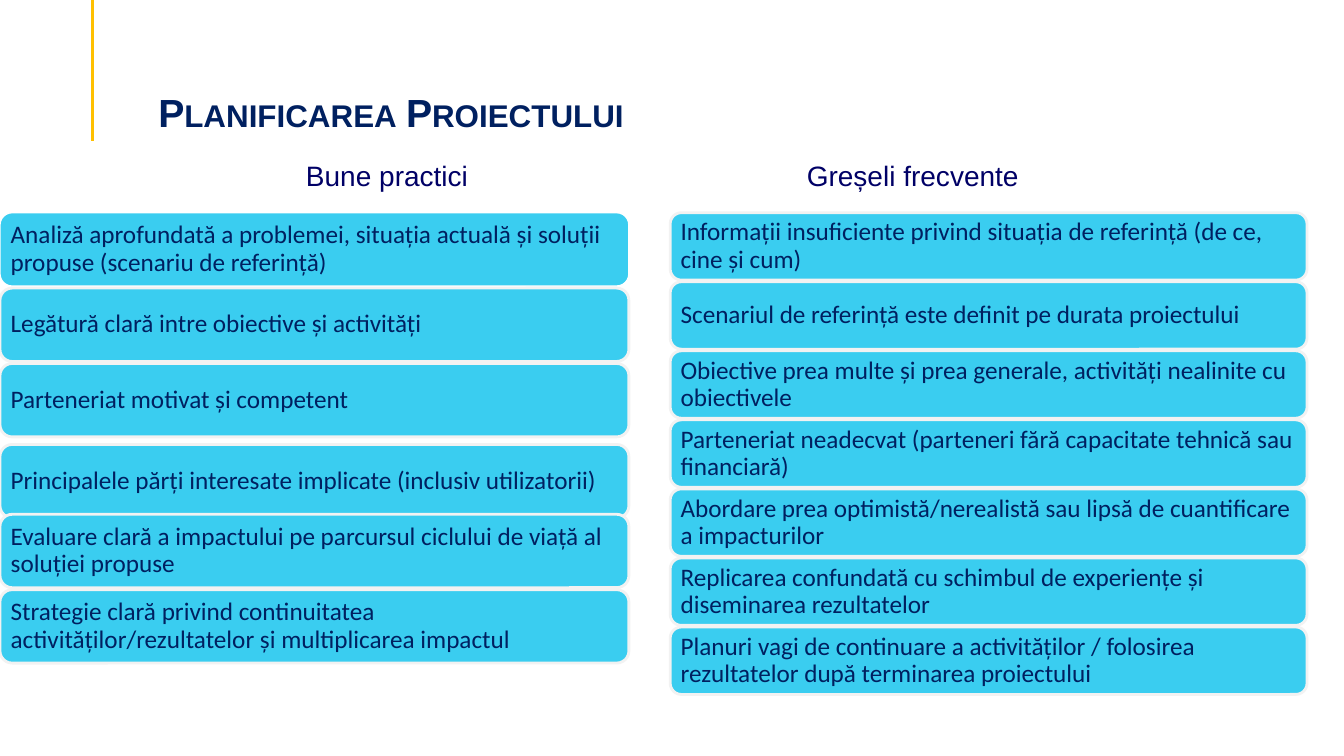
from lxml import etree
from pptx import Presentation
from pptx.dml.color import RGBColor
from pptx.enum.shapes import MSO_CONNECTOR, MSO_SHAPE
from pptx.enum.text import MSO_ANCHOR, PP_ALIGN
from pptx.oxml.ns import qn
from pptx.util import Cm, Pt

STRAIGHT = MSO_CONNECTOR.STRAIGHT
ROUNDED = MSO_SHAPE.ROUNDED_RECTANGLE
MIDDLE, BOTTOM = MSO_ANCHOR.MIDDLE, MSO_ANCHOR.BOTTOM
LEFT, CENTER = PP_ALIGN.LEFT, PP_ALIGN.CENTER

NAVY = RGBColor(0x00, 0x20, 0x60)
HEADING_BLUE = RGBColor(0x00, 0x00, 0x66)
CYAN = RGBColor(0x3A, 0xCD, 0xF0)
GOLD = RGBColor(0xFF, 0xC0, 0x00)
PALE = RGBColor(0xF2, 0xF2, 0xF2)
WHITE = RGBColor(0xFF, 0xFF, 0xFF)

CARDS_TOP = 5.36
CARD_INSET = Cm(0.18)

GOOD_PRACTICES = [
    "Analiză aprofundată a problemei, situația actuală și soluții propuse (scenariu de referință)",
    "Legătură clară intre obiective și activități",
    "Parteneriat motivat și competent",
    "Principalele părți interesate implicate (inclusiv utilizatorii)",
    "Evaluare clară a impactului pe parcursul ciclului de viață al soluției propuse",
    "Strategie clară privind continuitatea activităților/rezultatelor și multiplicarea impactul",
]
COMMON_MISTAKES = [
    "Informații insuficiente privind situația de referință (de ce, cine și cum)",
    "Scenariul de referință este definit pe durata proiectului",
    "Obiective prea multe și prea generale, activități nealinite cu obiectivele",
    "Parteneriat neadecvat (parteneri fără capacitate tehnică sau financiară)",
    "Abordare prea optimistă/nerealistă sau lipsă de cuantificare a impacturilor",
    "Replicarea confundată cu schimbul de experiențe și diseminarea rezultatelor",
    "Planuri vagi de continuare a activităților / folosirea rezultatelor după terminarea proiectului",
]


def write_text(box, text, font_name, size, color, align, line_spacing):
    """Fill a shape with one formatted paragraph and return its run."""
    frame = box.text_frame
    frame.word_wrap = True
    para = frame.paragraphs[0]
    para.text = text
    para.alignment = align
    para.line_spacing = line_spacing
    span = para.runs[0]
    span.font.name = font_name
    span.font.size = Pt(size)
    span.font.color.rgb = color
    return span


def add_title(slide, left, top, width, height):
    accent = slide.shapes.add_connector(STRAIGHT, Cm(2.34), 0, Cm(2.34), Cm(3.56))
    accent.line.color.rgb = GOLD
    accent.line.width = Pt(2.25)
    etree.SubElement(accent._element.spPr, qn("a:effectLst"))

    box = slide.shapes.add_textbox(Cm(left), Cm(top), Cm(width), Cm(height))
    span = write_text(box, "Planificarea Proiectului", "Arial", 28, NAVY, LEFT, 1.5)
    span.font.bold = True
    span._r.get_or_add_rPr().set("cap", "small")
    frame = box.text_frame
    frame.vertical_anchor = BOTTOM
    frame.margin_left = Cm(1.25)
    frame.margin_bottom = 0


def add_heading(slide, text, left, width):
    box = slide.shapes.add_textbox(Cm(left), Cm(3.94), Cm(width), Cm(1.42))
    write_text(box, text, "Arial", 20, HEADING_BLUE, CENTER, 0.93)


def add_card(slide, text, left, top, width, height):
    card = slide.shapes.add_shape(ROUNDED, Cm(left), Cm(top), Cm(width), Cm(height))
    card.shadow.inherit = False
    card.fill.solid()
    card.fill.fore_color.rgb = CYAN
    card.line.color.rgb = PALE
    card.line.width = Pt(2)
    write_text(card, text, "Calibri", 18, NAVY, LEFT, 0.9)
    frame = card.text_frame
    frame.vertical_anchor = MIDDLE
    frame.margin_left = frame.margin_right = CARD_INSET
    frame.margin_top = frame.margin_bottom = CARD_INSET
    return card


def add_card_column(slide, texts, left, width, height, pitch):
    """Stack one card per text, evenly spaced, and return the cards."""
    return [
        add_card(slide, text, left, CARDS_TOP + row * pitch, width, height)
        for row, text in enumerate(texts)
    ]


def build_planning_slide(deck):
    slide = deck.slides.add_slide(deck.slide_layouts[6])
    add_title(slide, 2.74, 1.24, 29.18, 2.16)

    practices = add_card_column(slide, GOOD_PRACTICES, 0, 15.85, 1.85, 1.9)
    practices[0].line.color.rgb = WHITE
    practices[0].line.width = Pt(1)
    practices[3].top += Cm(0.14)  # this card sits slightly lower than the rest

    add_heading(slide, "Bune practici", 4.14, 11.23)
    add_heading(slide, "Greșeli frecvente", 17.91, 10.19)
    add_card_column(slide, COMMON_MISTAKES, 16.89, 16.05, 1.7, 1.74)


def main():
    deck = Presentation()
    deck.slide_width = Cm(33.87)
    deck.slide_height = Cm(19.05)
    build_planning_slide(deck)
    deck.save("out.pptx")


if __name__ == "__main__":
    main()
